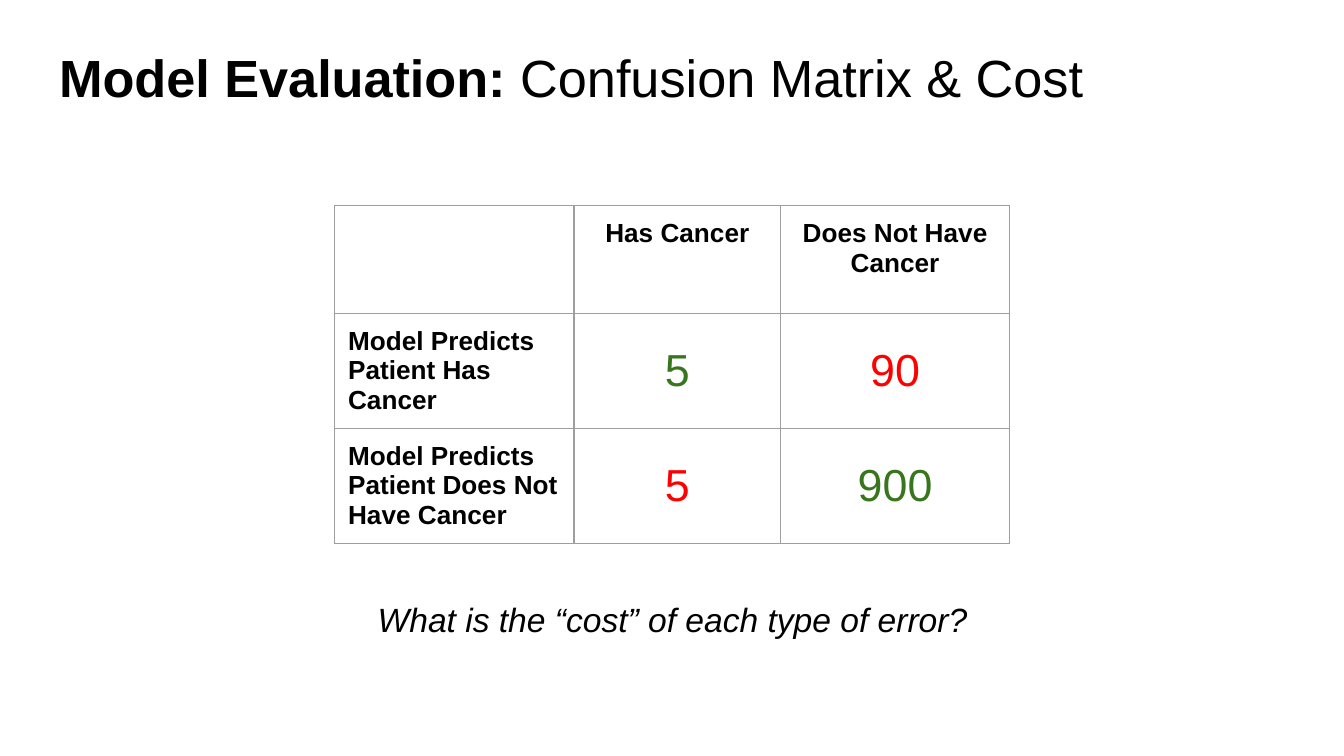
from lxml import etree
from pptx import Presentation
from pptx.dml.color import RGBColor
from pptx.enum.text import MSO_ANCHOR, MSO_AUTO_SIZE, PP_ALIGN
from pptx.oxml.ns import qn
from pptx.util import Inches, Pt

LEFT, CENTER = PP_ALIGN.LEFT, PP_ALIGN.CENTER
TOP, MIDDLE = MSO_ANCHOR.TOP, MSO_ANCHOR.MIDDLE
NO_FIT = MSO_AUTO_SIZE.NONE

# Widescreen slide
WIDTH = 10
HEIGHT = WIDTH * 9 / 16
INSET = Inches(0.1)
FONT = "Arial"
COLORS = {"text": "000000", "right": "38761D", "wrong": "FF0000", "border": "9E9E9E"}

# Table grid
TABLE_LEFT, TABLE_TOP = 2.49, 1.53
COLUMN_WIDTHS = [1.78, 1.54, 1.7]
ROW_HEIGHT = 0.8

# Text formats
HEADING = {"size": Pt(14), "bold": True}
COUNT = {"size": Pt(24), "bold": False}
QUESTION = {"size": Pt(18), "italic": True}
TITLE_BOLD = {"size": Pt(28), "bold": True}
TITLE_PLAIN = {"size": Pt(28), "bold": False}

COLUMN_HEADINGS = ["Has Cancer", "Does Not Have Cancer"]
PREDICTIONS = [
    ("Model Predicts Patient Has Cancer", [5, 90]),
    ("Model Predicts Patient Does Not Have Cancer", [5, 900]),
]


def add_span(para, text, style, color="text"):
    span = para.add_run()
    span.text = text
    span.font.name = FONT
    span.font.color.rgb = RGBColor.from_string(COLORS[color])
    for name, value in style.items():
        setattr(span.font, name, value)


def set_insets(target):
    for side in ("left", "top", "right", "bottom"):
        setattr(target, f"margin_{side}", INSET)


def fill_box(box, spans, align):
    """Write styled spans into the only paragraph of a box."""
    frame = box.text_frame
    frame.word_wrap = True
    frame.auto_size = NO_FIT
    frame.vertical_anchor = TOP
    set_insets(frame)
    para = frame.paragraphs[0]
    para.alignment = align
    for text, style in spans:
        add_span(para, text, style)


def add_title(slide):
    title = slide.shapes.title
    title.left, title.top = Inches(0.34), Inches(0.24)
    title.width, title.height = Inches(WIDTH - 2 * 0.34), Inches(0.63)
    spans = [("Model Evaluation: ", TITLE_BOLD), ("Confusion Matrix & Cost", TITLE_PLAIN)]
    fill_box(title, spans, LEFT)


def set_borders(cell):
    properties = cell._tc.get_or_add_tcPr()
    for index, tag in enumerate(("a:lnL", "a:lnR", "a:lnT", "a:lnB")):
        line = etree.Element(qn(tag), w=str(Pt(0.75)))
        fill = etree.SubElement(line, qn("a:solidFill"))
        etree.SubElement(fill, qn("a:srgbClr"), val=COLORS["border"])
        properties.insert(index, line)


def write_cell(cell, text, style, align=CENTER, anchor=MIDDLE, color="text"):
    cell.vertical_anchor = anchor
    para = cell.text_frame.paragraphs[0]
    para.alignment = align
    add_span(para, text, style, color)


def add_matrix(slide):
    rows, columns = len(PREDICTIONS) + 1, len(COLUMN_WIDTHS)
    frame = slide.shapes.add_table(
        rows, columns, Inches(TABLE_LEFT), Inches(TABLE_TOP),
        Inches(sum(COLUMN_WIDTHS)), Inches(rows * ROW_HEIGHT))
    table = frame.table
    table.first_row = table.horz_banding = False
    for column, width in zip(table.columns, COLUMN_WIDTHS):
        column.width = Inches(width)
    for row in table.rows:
        row.height = Inches(ROW_HEIGHT)
    for cell in table.iter_cells():
        cell.fill.background()
        set_insets(cell)
        set_borders(cell)

    # Headings across the top, then one row per prediction
    for column, heading in enumerate(COLUMN_HEADINGS, 1):
        write_cell(table.cell(0, column), heading, HEADING, anchor=TOP)
    for row, (prediction, counts) in enumerate(PREDICTIONS, 1):
        write_cell(table.cell(row, 0), prediction, HEADING, align=LEFT)
        for column, count in enumerate(counts, 1):
            color = "right" if row == column else "wrong"
            write_cell(table.cell(row, column), str(count), COUNT, color=color)


def add_question(slide):
    box = slide.shapes.add_textbox(Inches(2.38), Inches(4.36), Inches(5.25), Inches(1.08))
    fill_box(box, [("What is the “cost” of each type of error?", QUESTION)], CENTER)


def main():
    deck = Presentation()
    deck.slide_width, deck.slide_height = Inches(WIDTH), Inches(HEIGHT)
    slide = deck.slides.add_slide(deck.slide_layouts[5])
    add_matrix(slide)
    add_question(slide)
    add_title(slide)
    deck.save("out.pptx")


if __name__ == "__main__":
    main()
